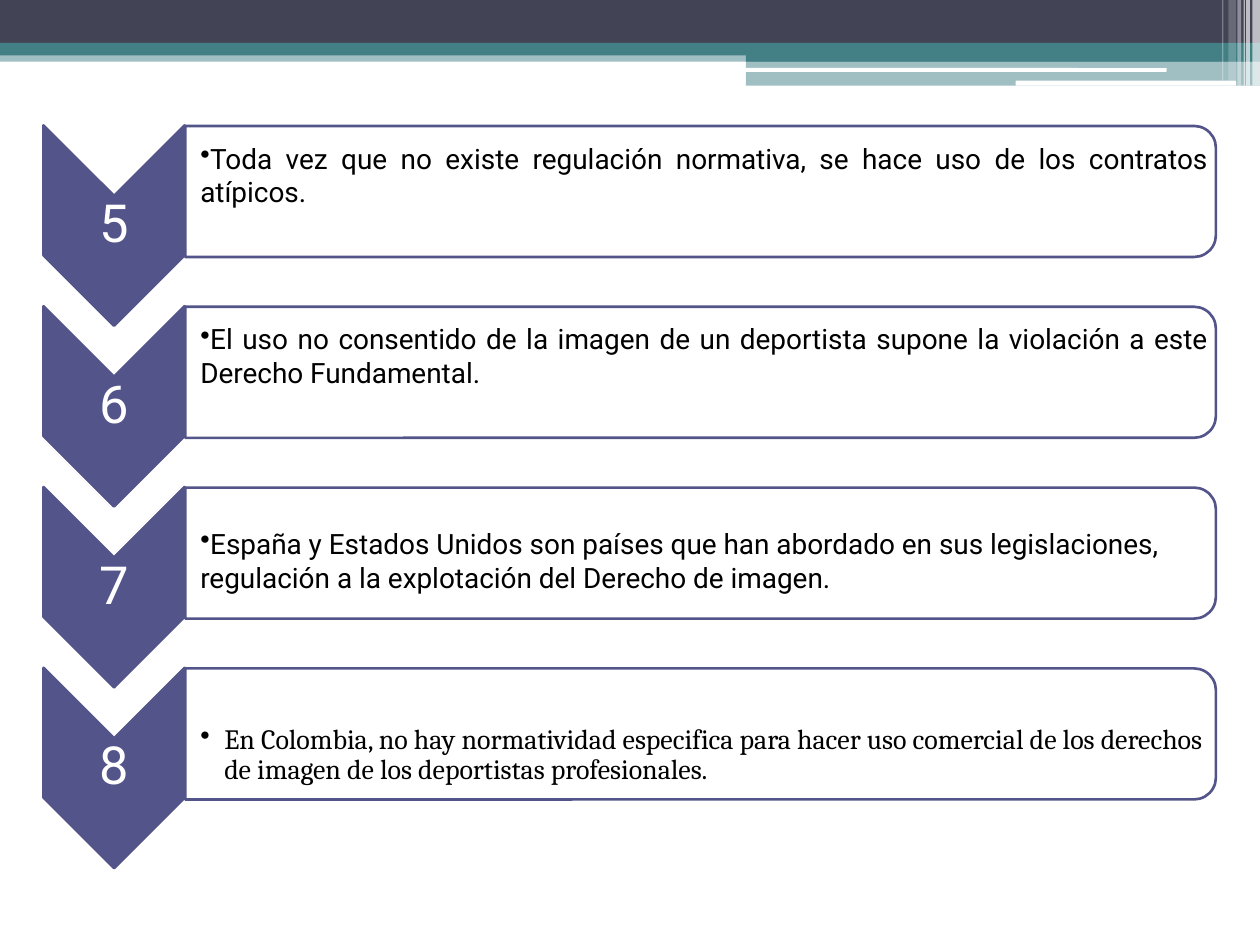
import pptx
import pptx.util
import pptx.dml.color
import pptx.enum.shapes
import pptx.enum.text
from lxml import etree
from pptx.util import Inches, Pt

MSO = pptx.enum.shapes.MSO_SHAPE
ALIGN = pptx.enum.text.PP_ALIGN
ANCHOR = pptx.enum.text.MSO_ANCHOR
NS = "{http://schemas.openxmlformats.org/drawingml/2006/main}"
COLORS = {"white": "FFFFFF", "black": "000000", "navy": "424456",
          "teal": "438086", "violet": "53548A"}


def rgb(name):
    return pptx.dml.color.RGBColor.from_string(COLORS[name])


def add_shape(s, kind, x, y, w, h, color, opacity=100, outline=None):
    """Add a filled shape; opacity is a percentage."""
    sp = s.shapes.add_shape(kind, Inches(x), Inches(y), Inches(w), Inches(h))
    sp.shadow.inherit = False
    sp.fill.solid()
    sp.fill.fore_color.rgb = rgb(color)
    if opacity < 100:
        clr = sp.fill._xPr.find(f"{NS}solidFill/{NS}srgbClr")
        etree.SubElement(clr, NS + "alpha", val=str(opacity * 1000))
    if outline:
        sp.line.color.rgb = rgb(outline)
        sp.line.width = Pt(1.5)
    else:
        sp.line.fill.background()
    return sp


prs = pptx.Presentation()
prs.slide_width, prs.slide_height = Inches(10), Inches(7.5)
s = prs.slides.add_slide(prs.slide_layouts[6])

# Header bands: kind, left, top, width, height, colour, opacity
bands = [
    (MSO.RECTANGLE, 0, 0.4, 10, 0.09, "teal", 50),
    (MSO.RECTANGLE, 0, 0, 10, 0.34, "navy", 100),
    (MSO.RECTANGLE, 0, 0.34, 10, 0.1, "teal", 100),
    (MSO.RECTANGLE, 5.92, 0.39, 4.08, 0.1, "teal", 100),
    (MSO.RECTANGLE, 5.92, 0.48, 4.08, 0.2, "teal", 50),
    (MSO.ROUNDED_RECTANGLE, 5.91, 0.54, 3.35, 0.03, "white", 100),
    (MSO.ROUNDED_RECTANGLE, 8.06, 0.64, 1.75, 0.04, "white", 100),
]
for band in bands:
    add_shape(s, *band)

# Vertical stripes in the corner: left, width, height, opacity
stripes = [(9.94, 0.06, 0.68, 65), (9.89, 0.03, 0.68, 65),
           (9.87, 0.01, 0.68, 60), (9.82, 0.03, 0.68, 40),
           (9.75, 0.06, 0.64, 20), (9.7, 0.01, 0.64, 30)]
for x, w, h, opacity in stripes:
    add_shape(s, MSO.RECTANGLE, x, 0, w, h, "white", opacity)

# Numbered points: text, alignment, font, top inset, hanging indent, line spacing
points = [
    ("Toda vez que no existe regulación normativa, se hace uso de los contratos "
     "atípicos.", ALIGN.JUSTIFY, "Roboto", 0.07, 0, 1),
    ("El uso no consentido de la imagen de un deportista supone la violación a "
     "este Derecho Fundamental.", ALIGN.JUSTIFY, "Roboto", 0.07, 0, 1),
    ("España y Estados Unidos son países que han abordado en sus legislaciones, "
     "regulación a la explotación del Derecho de imagen.",
     ALIGN.LEFT, "Roboto", 0.26, 0, 1),
    ("En Colombia, no hay normatividad especifica para hacer uso comercial de los "
     "derechos de imagen de los deportistas profesionales.",
     ALIGN.LEFT, "Cambria", 0.4, 0.19, 0.9),
]
FIRST_TOP, PITCH = 1.0, 1.435
for i, (text, align, font, inset, hang, spacing) in enumerate(points):
    top = FIRST_TOP + i * PITCH

    chevron = add_shape(s, MSO.CHEVRON, 0.11, top + 0.23, 1.59, 1.12,
                        "violet", outline="violet")
    chevron.rotation = 90

    tf = s.shapes.add_textbox(Inches(0.35), Inches(top + 0.55),
                              Inches(1.12), Inches(0.48)).text_frame
    tf.word_wrap = True
    tf.vertical_anchor = ANCHOR.MIDDLE
    tf.margin_left = tf.margin_right = tf.margin_top = tf.margin_bottom = Inches(0.02)
    p = tf.paragraphs[0]
    p.text = str(i + 5)
    p.alignment = ALIGN.CENTER
    p.line_spacing = 0.9
    p.font.name, p.font.size = "Roboto", Pt(30)
    p.font.color.rgb = rgb("white")

    panel = add_shape(s, MSO.ROUND_2_SAME_RECTANGLE, 5.04, top - 3.57, 1.04, 8.18,
                      "white", 90, "violet")
    panel.rotation = 90

    tf = s.shapes.add_textbox(Inches(1.47), Inches(top + 0.05),
                              Inches(8.13), Inches(0.93)).text_frame
    tf.word_wrap = True
    tf.vertical_anchor = ANCHOR.TOP
    tf.margin_left, tf.margin_top = Inches(0.12), Inches(inset)
    tf.margin_right = tf.margin_bottom = Inches(0.01)
    p = tf.paragraphs[0]
    p.text = text
    p.alignment = align
    p.line_spacing = spacing
    p.font.name, p.font.size = font, Pt(16)
    p.font.color.rgb = rgb("black")
    pPr = p._p.get_or_add_pPr()
    pPr.set("marL", str(Inches(hang)))
    pPr.set("indent", str(-Inches(hang)))
    bullet = etree.Element(NS + "buChar", char="•")
    pPr.find(NS + "defRPr").addprevious(bullet)

prs.save("out.pptx")
